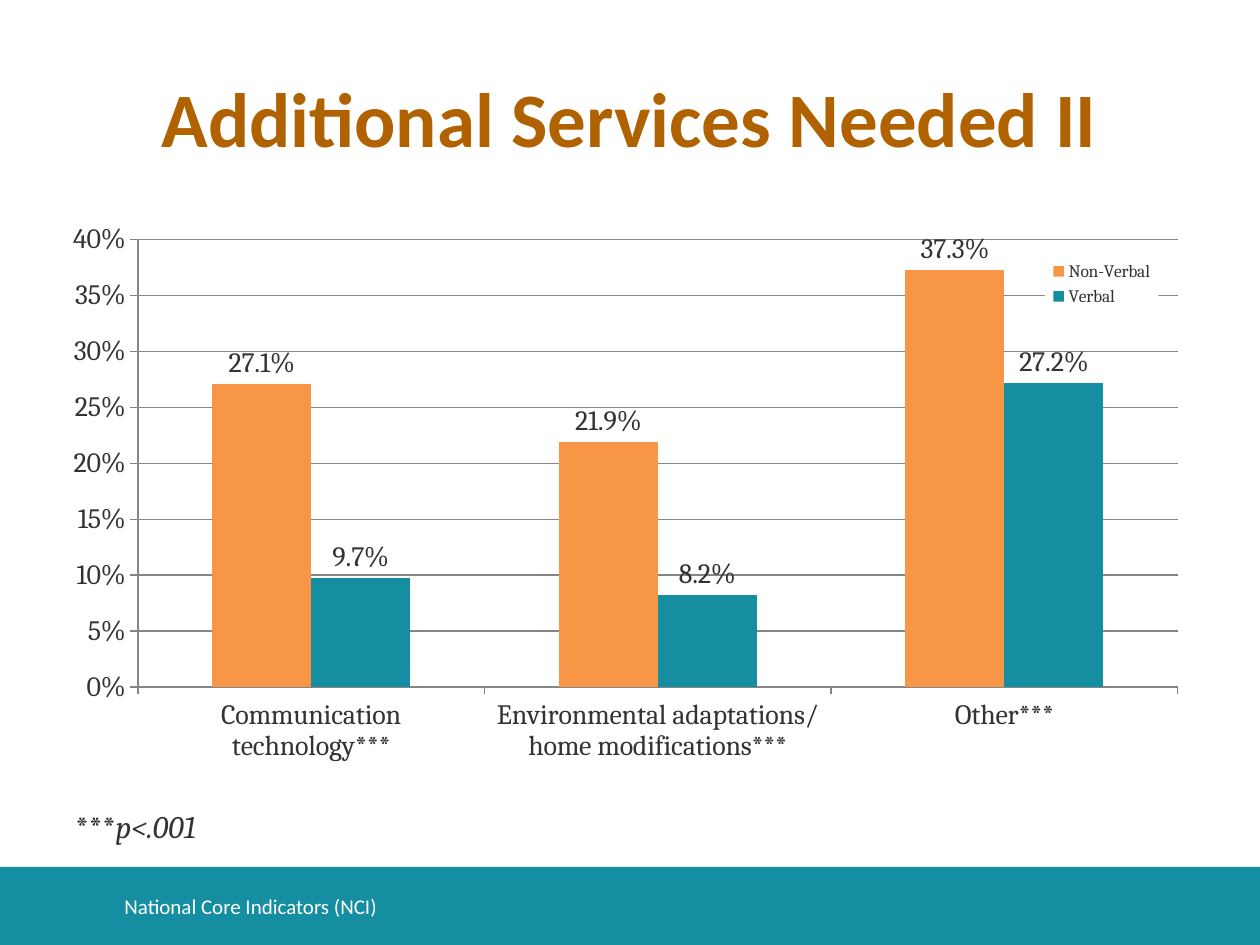
from dataclasses import dataclass

from lxml.etree import SubElement
from pptx import Presentation
from pptx.chart.data import CategoryChartData
from pptx.dml.color import RGBColor as Rgb
from pptx.enum.chart import XL_CHART_TYPE as ChartType
from pptx.enum.chart import XL_LABEL_POSITION as LabelPosition
from pptx.enum.chart import XL_LEGEND_POSITION as LegendPosition
from pptx.enum.chart import XL_TICK_MARK as TickMark
from pptx.enum.shapes import MSO_SHAPE as Shape
from pptx.enum.text import MSO_ANCHOR as Anchor
from pptx.enum.text import MSO_AUTO_SIZE as AutoSize
from pptx.enum.text import PP_ALIGN as Align
from pptx.oxml import parse_xml
from pptx.oxml.ns import nsdecls, qn
from pptx.util import Pt

PX = 914400 / 126


@dataclass(frozen=True)
class Theme:
    """Colours, fonts and type sizes of the slide."""
    teal: Rgb = Rgb.from_string("168EA2")
    orange: Rgb = Rgb.from_string("F79646")
    brown: Rgb = Rgb.from_string("B06100")
    ink: Rgb = Rgb.from_string("333333")
    white: Rgb = Rgb.from_string("FFFFFF")
    line: Rgb = Rgb.from_string("868686")
    sans: str = "Calibri"
    serif: str = "Cambria"
    title: int = 44
    note: int = 18
    label: int = 16
    footer: int = 12
    legend: int = 10


THEME = Theme()
CATEGORIES = ("Communication technology***",
              "Environmental adaptations/ home modifications***", "Other***")
SERIES = (("Non-Verbal", (0.271, 0.219, 0.373), THEME.orange),
          ("Verbal", (0.097, 0.082, 0.272), THEME.teal))


def emu(*lengths):
    """Turn px lengths into EMU."""
    return [round(length * PX) for length in lengths]


def style(font, name, size, color, bold=False):
    """Set the face, size, colour and weight of a font."""
    font.name, font.size, font.bold = name, Pt(size), bold
    font.color.rgb = color


def add_text(page, box, text, anchor=Anchor.MIDDLE):
    """Add a wrapping text box and return its first paragraph."""
    frame = page.shapes.add_textbox(*emu(*box)).text_frame
    frame.word_wrap = True
    frame.vertical_anchor = anchor
    para = frame.paragraphs[0]
    para.text = text
    return para


def add_title(page, box):
    """Place the centred slide title."""
    para = add_text(page, box, "Additional Services Needed II")
    para.alignment = Align.CENTER
    style(para.font, THEME.sans, THEME.title, THEME.brown, bold=True)


def add_footer(page, box):
    """Place the coloured band and its caption."""
    left, top, _, _ = box
    band = page.shapes.add_shape(Shape.RECTANGLE, *emu(*box))
    band.shadow.inherit = False
    band.fill.solid()
    band.fill.fore_color.rgb = THEME.teal
    band.line.fill.background()
    para = add_text(page, (left + 112, top + 14, 932, 50),
                    "National Core Indicators (NCI)")
    style(para.font, THEME.sans, THEME.footer, THEME.white)


def add_note(page, box):
    """Place the significance note under the chart."""
    para = add_text(page, box, "***", Anchor.TOP)
    span = para.add_run()
    span.text = "p<.001"
    span.font.italic = True
    style(para.font, THEME.serif, THEME.note, THEME.ink)


def set_layout(parent, position, inner=False):
    """Give a chart part a manual layout in fractions of the chart."""
    for old in parent.findall(qn("c:layout")):
        parent.remove(old)
    layout = parse_xml(f"<c:layout {nsdecls('c')}/>")
    manual = SubElement(layout, qn("c:manualLayout"))
    settings = [("layoutTarget", "inner")] if inner else []
    settings += [("xMode", "edge"), ("yMode", "edge")]
    settings += zip("xywh", position)
    for tag, value in settings:
        SubElement(manual, qn(f"c:{tag}")).set("val", str(value))
    if inner:
        parent.insert(0, layout)
    else:
        parent.find(qn("c:legendPos")).addnext(layout)


def style_axis(axis):
    """Set tick marks, line and label type of an axis."""
    axis.major_tick_mark = TickMark.OUTSIDE
    axis.minor_tick_mark = TickMark.NONE
    axis.format.line.color.rgb = THEME.line
    style(axis.tick_labels.font, THEME.serif, THEME.label, THEME.ink)


def style_legend(chart):
    """Lay the legend on a white panel over the plot."""
    chart.has_legend = True
    legend = chart.legend
    legend.position = LegendPosition.RIGHT
    legend.include_in_layout = False
    set_layout(legend._element, (0.866, 0.06, 0.1, 0.09))
    legend._element.find(qn("c:overlay")).addnext(parse_xml(
        f"<c:spPr {nsdecls('c', 'a')}><a:solidFill>"
        f'<a:srgbClr val="{THEME.white}"/></a:solidFill></c:spPr>'))
    style(legend.font, THEME.serif, THEME.legend, THEME.ink)


def style_series(series, color):
    """Colour one series and label its bars."""
    series.format.fill.solid()
    series.format.fill.fore_color.rgb = color
    series.invert_if_negative = False
    labels = series.data_labels
    labels.show_value = True
    labels.position = LabelPosition.OUTSIDE_END
    labels.number_format = "0.0%"
    labels.number_format_is_linked = False
    style(labels.font, THEME.serif, THEME.label, THEME.ink)


def add_services_chart(page, box):
    """Place the clustered column chart."""
    data = CategoryChartData(number_format="0.0%")
    data.categories = CATEGORIES
    for name, values, _ in SERIES:
        data.add_series(name, values)
    chart = page.shapes.add_chart(
        ChartType.COLUMN_CLUSTERED, *emu(*box), data).chart
    chart.has_title = False
    style(chart.font, THEME.serif, THEME.legend, THEME.ink)
    plot = chart.plots[0]
    plot.gap_width, plot.overlap, plot.vary_by_categories = 150, 0, False
    for series, (_, _, color) in zip(plot.series, SERIES):
        style_series(series, color)
    style_axis(chart.category_axis)
    values_axis = chart.value_axis
    style_axis(values_axis)
    values_axis.minimum_scale, values_axis.maximum_scale = 0, 0.4
    values_axis.major_unit = 0.05
    values_axis.has_major_gridlines = True
    values_axis.major_gridlines.format.line.color.rgb = THEME.line
    values_axis.tick_labels.number_format = "0%"
    values_axis.tick_labels.number_format_is_linked = False
    style_legend(chart)
    plot_area = chart._chartSpace.chart.plotArea
    set_layout(plot_area, (0.066, 0.032, 0.917, 0.735), inner=True)


def main():
    """Build the slide and save the deck."""
    deck = Presentation()
    deck.slide_width, deck.slide_height = emu(1260, 945)
    page = deck.slides.add_slide(deck.slide_layouts[6])
    add_footer(page, (0, 867, 1260, 78))
    add_title(page, (63, 38, 1134, 157))
    add_services_chart(page, (63, 220, 1134, 609))
    add_note(page, (63, 801, 428, 89))
    deck.save("out.pptx")


if __name__ == "__main__":
    main()
